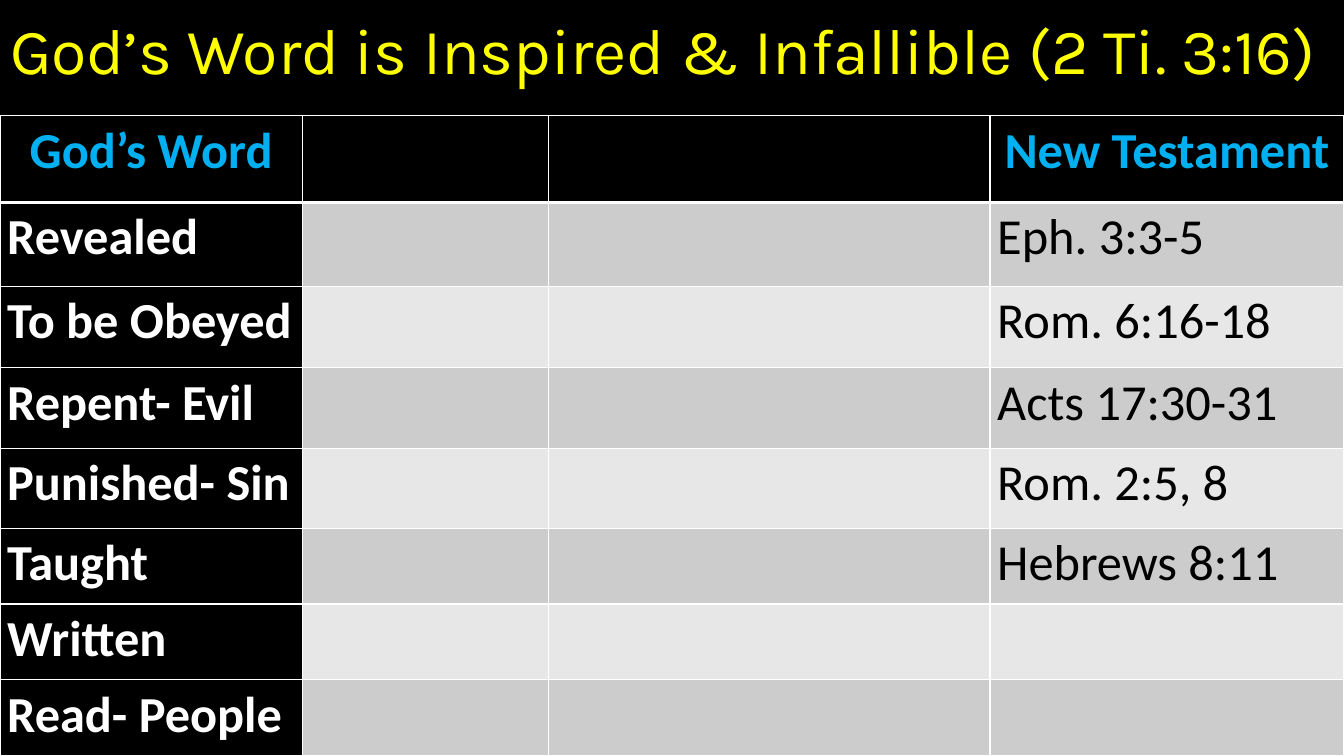
from lxml import etree
from pptx import Presentation
from pptx.dml import color
from pptx.enum import text
from pptx.oxml import ns
from pptx.util import Cm, Pt

COLUMN_WIDTHS = [7.62, 6.2, 11.13, 8.92]
ROW_HEIGHTS = [2.18, 2.11, 2.06, 2.03, 2.01, 1.91, 1.91, 1.91]
ROWS = [
    ("God’s Word", "New Testament"),
    ("Revealed", "Eph. 3:3-5"),
    ("To be Obeyed", "Rom. 6:16-18"),
    ("Repent- Evil", "Acts 17:30-31"),
    ("Punished- Sin", "Rom. 2:5, 8"),
    ("Taught", "Hebrews 8:11"),
    ("Written", ""),
    ("Read- People", ""),
]
BLACK, WHITE, YELLOW, BLUE = "000000", "FFFFFF", "FFFF00", "00B0F0"
BANDS = ["E7E7E7", "CCCCCC"]


def paint(fill, value):
    fill.solid()
    fill.fore_color.rgb = color.RGBColor.from_string(value)


def add_run(paragraph, content, font_name, size, value, bold=False):
    run = paragraph.add_run()
    run.text = content
    run.font.name = font_name
    run.font.size = Pt(size)
    run.font.bold = bold
    run.font.color.rgb = color.RGBColor.from_string(value)


def add_title(slide, content):
    title = slide.shapes.title
    title.left, title.top, title.width, title.height = Cm(0), Cm(0), Cm(33.87), Cm(2.69)
    frame = title.text_frame
    frame.word_wrap = True
    frame.auto_size = text.MSO_AUTO_SIZE.NONE
    frame.vertical_anchor = text.MSO_ANCHOR.MIDDLE
    paragraph = frame.paragraphs[0]
    paragraph.alignment = text.PP_ALIGN.LEFT
    paragraph.line_spacing = 0.9
    add_run(paragraph, content, "Karla", 46, YELLOW)


def set_borders(cell, widths):
    properties = cell._tc.get_or_add_tcPr()
    for side, width in widths.items():
        line = etree.SubElement(properties, ns.qn(f"a:ln{side}"), w=str(Pt(width)))
        fill = etree.SubElement(line, ns.qn("a:solidFill"))
        etree.SubElement(fill, ns.qn("a:srgbClr"), val=WHITE)


def fill_cell(cell, content, text_color, bold, centred):
    cell.margin_left = cell.margin_right = Cm(0.18)
    cell.margin_top = cell.margin_bottom = Cm(0)
    paragraph = cell.text_frame.paragraphs[0]
    paragraph.alignment = text.PP_ALIGN.CENTER if centred else text.PP_ALIGN.LEFT
    paragraph.line_spacing = 1.07
    add_run(paragraph, content, "Calibri", 36, text_color, bold)


def add_scripture_table(slide):
    frame = slide.shapes.add_table(
        len(ROWS), len(COLUMN_WIDTHS), Cm(0), Cm(2.92),
        Cm(sum(COLUMN_WIDTHS)), Cm(sum(ROW_HEIGHTS)))
    table = frame.table
    for column, width in zip(table.columns, COLUMN_WIDTHS):
        column.width = Cm(width)
    for row, height in zip(table.rows, ROW_HEIGHTS):
        row.height = Cm(height)
    for row_index, (topic, reference) in enumerate(ROWS):
        header = row_index == 0
        for column_index, content in enumerate([topic, "", "", reference]):
            cell = table.cell(row_index, column_index)
            first = column_index == 0
            set_borders(cell, {"L": 1, "R": 1, "T": 3 if row_index == 1 else 1,
                               "B": 3 if header else 1})
            paint(cell.fill, BLACK if header or first else BANDS[row_index % 2])
            if content:
                text_color = BLUE if header else WHITE if first else BLACK
                fill_cell(cell, content, text_color, header or first, header)


def main():
    presentation = Presentation()
    presentation.slide_width, presentation.slide_height = Cm(33.87), Cm(19.05)
    slide = presentation.slides.add_slide(presentation.slide_layouts[5])
    paint(slide.background.fill, BLACK)
    add_title(slide, "God’s Word is Inspired & Infallible (2 Ti. 3:16)")
    add_scripture_table(slide)
    presentation.save("out.pptx")


if __name__ == "__main__":
    main()
